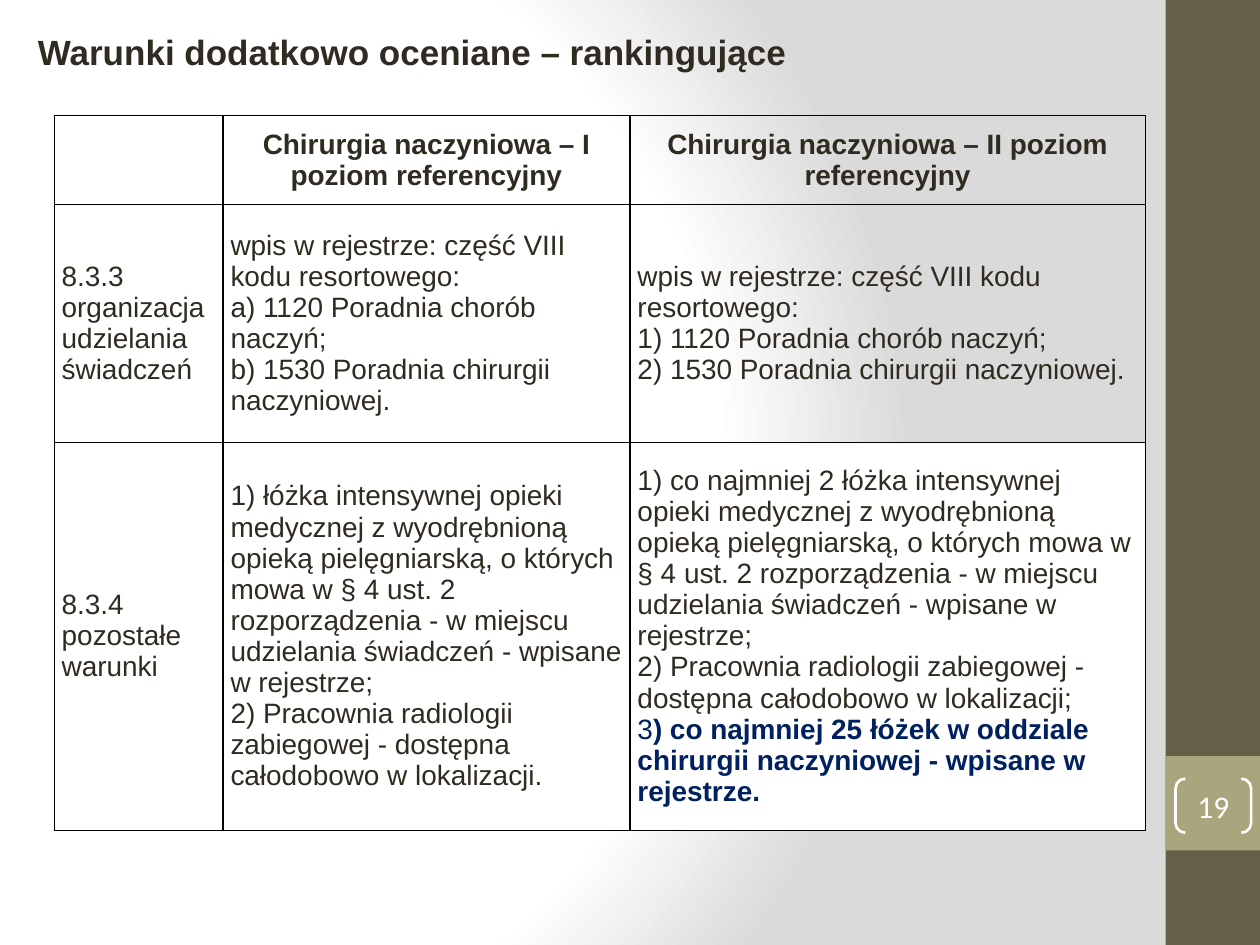
from pptx import Presentation
from pptx.dml.color import RGBColor
from pptx.enum.shapes import MSO_SHAPE as Shape
from pptx.enum.text import MSO_ANCHOR as Anchor, MSO_AUTO_SIZE as AutoSize, PP_ALIGN as Align
from pptx.oxml import parse_xml
from pptx.oxml.ns import nsdecls
from pptx.util import Inches, Pt

INK = RGBColor(0x2F, 0x2B, 0x20)
NAVY = RGBColor(0x00, 0x20, 0x60)
WHITE = RGBColor(0xFF, 0xFF, 0xFF)
BROWN = RGBColor(0x67, 0x5E, 0x47)
OLIVE = RGBColor(0xA9, 0xA5, 0x7C)
SILVER = RGBColor(0xDA, 0xDA, 0xDA)
BLACK = RGBColor(0x00, 0x00, 0x00)

COLUMN_SHARES = (13.4, 32.3, 40.9)
ROW_SHARES = (9.33, 25.2, 41.07)

REGISTER = "wpis w rejestrze: część VIII kodu resortowego:\n"
BEDS = ("łóżka intensywnej opieki medycznej z wyodrębnioną opieką pielęgniarską, "
        "o których mowa w § 4 ust. 2 rozporządzenia - w miejscu udzielania świadczeń "
        "- wpisane w rejestrze;\n")
RADIOLOGY = "2) Pracownia radiologii zabiegowej - dostępna całodobowo w lokalizacji"


def write(paragraph, text, font="Arial", size=16, color=INK, bold=False, align=Align.LEFT):
    """Add text to the paragraph; each newline becomes a line break."""
    paragraph.alignment = align
    for index, line in enumerate(text.split("\n")):
        if index:
            paragraph.add_line_break()
        if line:
            run = paragraph.add_run()
            run.text = line
            run.font.name, run.font.size, run.font.bold = font, Pt(size), bold
            run.font.color.rgb = color


def set_margins(target, horizontal, vertical):
    target.margin_left = target.margin_right = Inches(horizontal)
    target.margin_top = target.margin_bottom = Inches(vertical)


def add_borders(cell, color=BLACK, width=Pt(0.75)):
    properties = cell._tc.get_or_add_tcPr()
    for side in "LRTB":
        properties.append(parse_xml(
            f'<a:ln{side} {nsdecls("a")} w="{width}"><a:solidFill>'
            f'<a:srgbClr val="{color}"/></a:solidFill></a:ln{side}>'))


class SlideBuilder:
    """Holds the current slide; all lengths are percentages of its size."""

    def __init__(self, deck):
        self.width, self.height = deck.slide_width, deck.slide_height
        self.slide = deck.slides.add_slide(deck.slide_layouts[5])

    def across(self, share):
        return round(self.width * share / 100)

    def down(self, share):
        return round(self.height * share / 100)

    def box(self, left, top, width, height):
        return self.across(left), self.down(top), self.across(width), self.down(height)

    def background(self):
        self.slide.background.fill.gradient()
        gradient = self.slide.element.xpath(".//p:bg//a:gradFill")[0]
        stops = "".join(f'<a:gs pos="{place * 1000}"><a:srgbClr val="{color}"/></a:gs>'
                        for place, color in ((0, WHITE), (75, WHITE), (100, SILVER)))
        gradient.getparent().replace(gradient, parse_xml(
            f'<a:gradFill {nsdecls("a")} rotWithShape="1"><a:gsLst>{stops}</a:gsLst>'
            '<a:path path="circle"><a:fillToRect l="20000" t="50000" r="100000" b="50000"/>'
            '</a:path></a:gradFill>'))

    def panel(self, *place, color):
        panel = self.slide.shapes.add_shape(Shape.RECTANGLE, *self.box(*place))
        panel.shadow.inherit = False
        panel.fill.solid()
        panel.fill.fore_color.rgb = color
        panel.line.fill.background()

    def page_number(self, *place, number):
        bracket = self.slide.shapes.add_shape(Shape.DOUBLE_BRACKET, *self.box(*place))
        bracket.shadow.inherit = False
        bracket.adjustments[0] = 0.18
        bracket.fill.background()
        bracket.line.color.rgb = WHITE
        bracket.line.width = Pt(1.5)
        frame = bracket.text_frame
        frame.vertical_anchor = Anchor.MIDDLE
        set_margins(frame, 0, 0)
        write(frame.paragraphs[0], number, font="Calibri", size=18, color=WHITE,
              align=Align.CENTER)

    def title(self, *place, text):
        title = self.slide.shapes.title
        title.left, title.top, title.width, title.height = self.box(*place)
        frame = title.text_frame
        frame.word_wrap = True
        frame.auto_size = AutoSize.NONE
        frame.vertical_anchor = Anchor.MIDDLE
        write(frame.paragraphs[0], text, size=20, bold=True)

    def table(self, left, top, rows, clear_cells):
        """Each cell is a list of (text, format) pairs; clear cells show the background."""
        place = self.box(left, top, sum(COLUMN_SHARES), sum(ROW_SHARES))
        table = self.slide.shapes.add_table(len(rows), len(COLUMN_SHARES), *place).table
        table.first_row = table.horz_banding = False
        for column, share in zip(table.columns, COLUMN_SHARES):
            column.width = self.across(share)
        for row, share in zip(table.rows, ROW_SHARES):
            row.height = self.down(share)
        for r, row in enumerate(rows):
            for c, pieces in enumerate(row):
                cell = table.cell(r, c)
                cell.vertical_anchor = Anchor.MIDDLE
                set_margins(cell, 0.06, 0.03)
                add_borders(cell)
                if (r, c) in clear_cells:
                    cell.fill.background()
                else:
                    cell.fill.solid()
                    cell.fill.fore_color.rgb = WHITE
                for text, style in pieces:
                    write(cell.text_frame.paragraphs[0], text, **style)


def main():
    deck = Presentation()
    deck.slide_width, deck.slide_height = Inches(10), Inches(7.5)
    builder = SlideBuilder(deck)
    builder.background()
    builder.panel(92.5, 0, 7.5, 100, color=BROWN)
    builder.panel(92.5, 80, 7.5, 10, color=OLIVE)
    builder.page_number(93.3, 82.4, 6, 5.73, number="19")
    builder.title(2, 1.75, 83.3, 7.33, text="Warunki dodatkowo oceniane – rankingujące")

    heading = {"bold": True, "align": Align.CENTER}
    rows = [
        [[],
         [("Chirurgia naczyniowa – I poziom referencyjny", heading)],
         [("Chirurgia naczyniowa – II poziom referencyjny", heading)]],
        [[("8.3.3 organizacja udzielania świadczeń", {})],
         [(REGISTER + "a) 1120 Poradnia chorób naczyń;\n"
           "b) 1530 Poradnia chirurgii naczyniowej.", {})],
         [(REGISTER + "1) 1120 Poradnia chorób naczyń;\n"
           "2) 1530 Poradnia chirurgii naczyniowej.", {})]],
        [[("8.3.4 pozostałe warunki", {})],
         [("1) " + BEDS + RADIOLOGY + ".", {})],
         [("1) co najmniej 2 " + BEDS + RADIOLOGY + ";\n", {}),
          ("3", {"color": NAVY}),
          (") co najmniej 25 łóżek w oddziale chirurgii naczyniowej - wpisane w rejestrze.",
           {"color": NAVY, "bold": True})]],
    ]
    builder.table(4.3, 12.27, rows, clear_cells={(0, 0), (0, 1), (0, 2), (1, 1), (1, 2)})
    deck.save("out.pptx")


if __name__ == "__main__":
    main()
